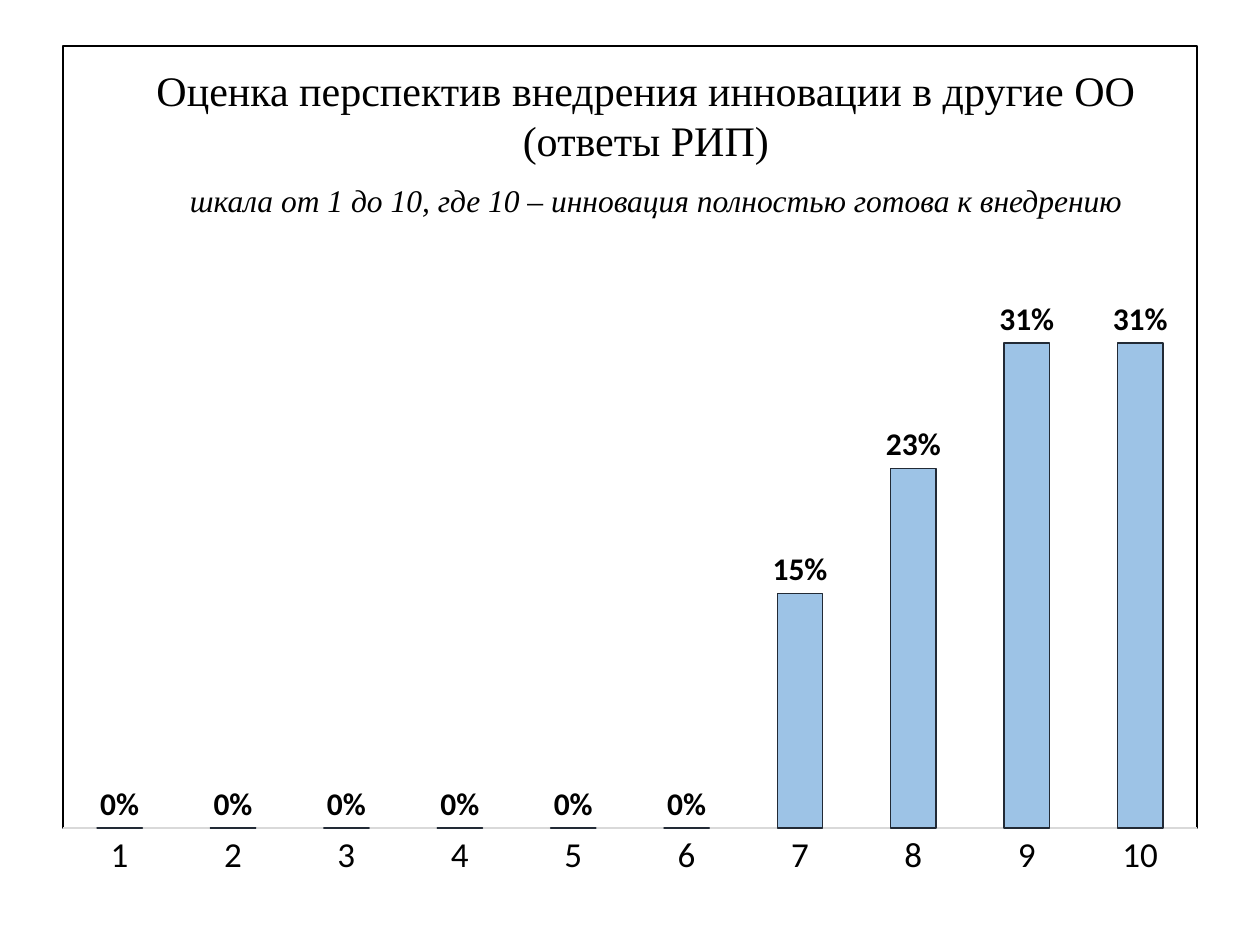
from dataclasses import dataclass

import lxml.etree
import pptx
import pptx.chart.data
import pptx.dml.color
import pptx.enum.chart
import pptx.enum.text
import pptx.oxml
import pptx.oxml.ns
import pptx.util

Pt = pptx.util.Pt
RGB = pptx.dml.color.RGBColor.from_string


@dataclass(frozen=True)
class Theme:
    ink: str = "000000"
    bar: str = "9DC3E6"
    bar_edge: str = "222A35"
    rule: str = "D9D9D9"
    heading_font: str = "Times New Roman"
    chart_font: str = "Calibri"
    heading_size: int = 24
    scale_size: int = 18
    label_size: int = 18
    axis_size: int = 20
    line: float = 0.75


THEME = Theme()
SCORES = [0, 0, 0, 0, 0, 0, 0.15, 0.23, 0.31, 0.31]


def style_font(font, name, size, bold=False, italic=False):
    font.name = name
    font.size = Pt(size)
    font.bold = bold
    font.italic = italic
    font.color.rgb = RGB(THEME.ink)


def style_line(line, color):
    line.color.rgb = RGB(color)
    line.width = Pt(THEME.line)


def frame_plot(chart, box, plot_box):
    left, top, width, height = box
    fractions = {
        "x": (plot_box[0] - left) / width,
        "y": (plot_box[1] - top) / height,
        "w": plot_box[2] / width,
        "h": plot_box[3] / height,
    }
    plot_area = chart.plots[0]._element.getparent()
    for old_layout in plot_area.findall(pptx.oxml.ns.qn("c:layout")):
        plot_area.remove(old_layout)
    places = "".join(f'<c:{key} val="{value:.4f}"/>' for key, value in fractions.items())
    namespaces = pptx.oxml.ns.nsdecls("c", "a")
    plot_area.insert(0, pptx.oxml.parse_xml(
        f'<c:layout {namespaces}><c:manualLayout><c:layoutTarget val="inner"/>'
        f'<c:xMode val="edge"/><c:yMode val="edge"/>{places}</c:manualLayout></c:layout>'))
    plot_area.append(pptx.oxml.parse_xml(
        f'<c:spPr {namespaces}><a:noFill/><a:ln w="{Pt(THEME.line)}"><a:solidFill>'
        f'<a:srgbClr val="{THEME.ink}"/></a:solidFill></a:ln></c:spPr>'))


def add_score_chart(slide, box, plot_box):
    scores = pptx.chart.data.CategoryChartData(number_format="0%")
    scores.categories = [str(score) for score in range(1, len(SCORES) + 1)]
    scores.add_series("Series 1", SCORES)
    chart = slide.shapes.add_chart(
        pptx.enum.chart.XL_CHART_TYPE.COLUMN_CLUSTERED, *map(Pt, box), scores).chart
    chart.has_title = False
    chart.has_legend = False
    style_font(chart.font, THEME.chart_font, 10)

    score_axis = chart.category_axis
    score_axis.major_tick_mark = pptx.enum.chart.XL_TICK_MARK.NONE
    style_font(score_axis.tick_labels.font, THEME.chart_font, THEME.axis_size)
    style_line(score_axis.format.line, THEME.rule)

    share_axis = chart.value_axis
    share_axis.minimum_scale = 0
    share_axis.maximum_scale = 0.5
    share_axis.major_unit = 1
    share_axis.has_major_gridlines = True
    style_line(share_axis.major_gridlines.format.line, THEME.rule)
    share_axis.visible = False

    columns = chart.plots[0]
    columns.gap_width = 150
    columns.vary_by_categories = False
    answers = columns.series[0]
    answers.format.fill.solid()
    answers.format.fill.fore_color.rgb = RGB(THEME.bar)
    style_line(answers.format.line, THEME.bar_edge)
    labels = answers.data_labels
    labels.show_value = True
    labels.number_format = "0%"
    labels.number_format_is_linked = False
    labels.position = pptx.enum.chart.XL_LABEL_POSITION.OUTSIDE_END
    style_font(labels.font, THEME.chart_font, THEME.label_size, bold=True)
    frame_plot(chart, box, plot_box)


def add_caption(slide, box, wording, size, align, wrap=True, italic=False):
    frame = slide.shapes.add_textbox(*map(Pt, box)).text_frame
    frame.word_wrap = wrap
    frame.auto_size = pptx.enum.text.MSO_AUTO_SIZE.SHAPE_TO_FIT_TEXT
    caption = frame.paragraphs[0]
    caption.text = wording
    caption.alignment = align
    style_font(caption.font, THEME.heading_font, size, italic=italic)


def main():
    deck = pptx.Presentation()
    deck.slide_width, deck.slide_height = Pt(720), Pt(540)
    slide = deck.slides.add_slide(deck.slide_layouts[6])
    align = pptx.enum.text.PP_ALIGN
    add_score_chart(slide, (22.3, 16.6, 675.4, 493.9), (36, 26.3, 648, 447))
    add_caption(slide, (56.2, 33.1, 625.7, 65.5),
                "Оценка перспектив внедрения инновации в другие ОО (ответы РИП)",
                THEME.heading_size, align.CENTER)
    add_caption(slide, (101.5, 100.1, 563.8, 28.8),
                "шкала от 1 до 10, где 10 – инновация полностью готова к внедрению",
                THEME.scale_size, align.LEFT, wrap=False, italic=True)
    deck.save("out.pptx")


if __name__ == "__main__":
    main()
